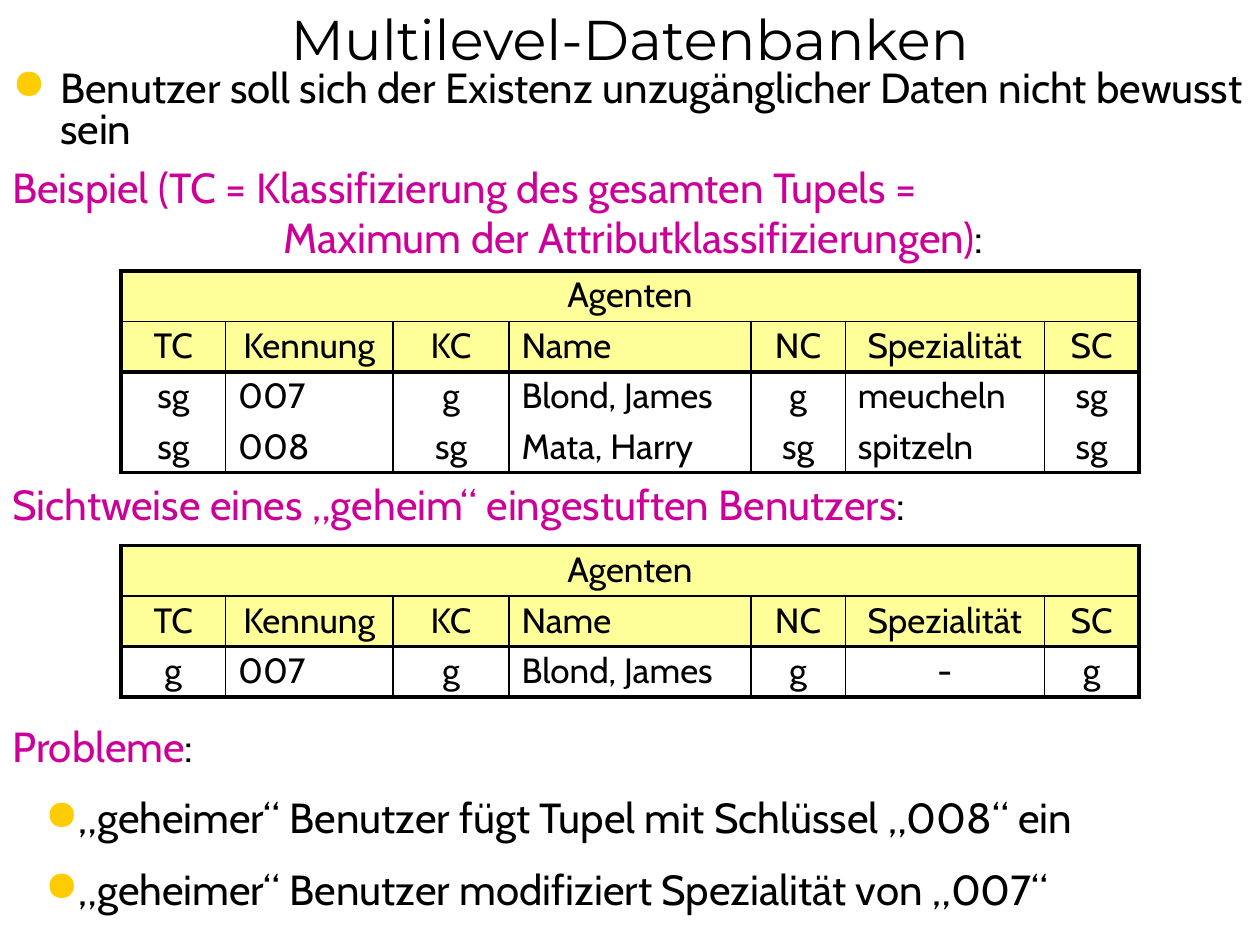
import pptx
import pptx.dml.color
import pptx.enum.text
import pptx.oxml
import pptx.oxml.ns
import pptx.util
from pptx.util import Inches

COLORS = {"black": "000000", "heading": "CC0099", "bullet": "FFCC00", "header": "FFFF99"}
BODY_FONT = "Cabin"
ALIGN = pptx.enum.text.PP_ALIGN
COLUMNS = ["TC", "Kennung", "KC", "Name", "NC", "Spezialität", "SC"]
WIDTHS = [0.83, 1.33, 0.92, 1.92, 0.75, 1.58, 0.75]
TEXT_COLUMNS = {"Kennung", "Name", "Spezialität"}
ROW_HEIGHT = 0.4
THICK, THIN = 2.25, 1


def rgb(name):
    return pptx.dml.color.RGBColor.from_string(COLORS[name])


def style_paragraph(paragraph, size, font=BODY_FONT, align=ALIGN.LEFT):
    paragraph.alignment = align
    paragraph.font.size = pptx.util.Pt(size)
    paragraph.font.name = font
    paragraph.font.color.rgb = rgb("black")


def add_text_frame(slide, top, height):
    box = slide.shapes.add_textbox(Inches(0), Inches(top), Inches(10), Inches(height))
    box.text_frame.word_wrap = True
    return box.text_frame


def append_xml(parent, content):
    tag, rest = content.split(" ", 1)
    namespace = pptx.oxml.ns.nsdecls("a")
    parent.append(pptx.oxml.parse_xml(f"<{tag} {namespace} {rest}"))


def add_title(slide, text):
    frame = add_text_frame(slide, 0, 0.6)
    frame.vertical_anchor = pptx.enum.text.MSO_ANCHOR.MIDDLE
    frame.paragraphs[0].text = text
    style_paragraph(frame.paragraphs[0], 32, "Montserrat", ALIGN.CENTER)


def write_bullet(paragraph, text, left, hanging):
    paragraph.text = text
    style_paragraph(paragraph, 24)
    properties = paragraph._p.get_or_add_pPr()
    properties.set("marL", str(Inches(left)))
    properties.set("indent", str(-Inches(hanging)))
    append_xml(properties, f'a:buClr ><a:srgbClr val="{COLORS["bullet"]}"/></a:buClr>')
    append_xml(properties, 'a:buChar char="●"/>')


def add_heading(slide, top, height, text):
    frame = add_text_frame(slide, top, height)
    paragraph = frame.paragraphs[0]
    paragraph.text = text
    paragraph.runs[0].font.color.rgb = rgb("heading")
    for run in paragraph.runs:
        run.font.color.rgb = rgb("heading")
    paragraph.add_run().text = ":"
    style_paragraph(paragraph, 24)
    return frame


def set_borders(cell, left, right, top, bottom):
    properties = cell._tc.get_or_add_tcPr()
    for side, width in zip("LRTB", (left, right, top, bottom)):
        if width:
            line = f'<a:solidFill><a:srgbClr val="{COLORS["black"]}"/></a:solidFill>'
        else:
            line = "<a:noFill/>"
        append_xml(properties, f'a:ln{side} w="{pptx.util.Pt(width)}">{line}</a:ln{side}>')


def fill_cell(cell, text, align, is_header):
    cell.text = text
    paragraph = cell.text_frame.paragraphs[0]
    style_paragraph(paragraph, 20, align=align)
    paragraph.line_spacing = 0.9
    if is_header:
        cell.fill.solid()
        cell.fill.fore_color.rgb = rgb("header")
    else:
        cell.fill.background()


def cell_alignment(column, text, is_header):
    if column == "Name" or (column in TEXT_COLUMNS and not is_header and text != "-"):
        return ALIGN.LEFT
    return ALIGN.CENTER


def add_agents_table(slide, top, records):
    rows = [["Agenten"] + [""] * (len(COLUMNS) - 1), COLUMNS] + records
    last_row, last_column = len(rows) - 1, len(COLUMNS) - 1
    table = slide.shapes.add_table(
        len(rows), len(COLUMNS), Inches(0.96), Inches(top),
        Inches(sum(WIDTHS)), Inches(ROW_HEIGHT * len(rows))).table
    table.first_row = table.horz_banding = False
    for column, width in zip(table.columns, WIDTHS):
        column.width = Inches(width)
    row_lines = [THICK, THIN, THICK] + [0] * (len(records) - 1) + [THICK]
    for r, values in enumerate(rows):
        table.rows[r].height = Inches(ROW_HEIGHT)
        for c, text in enumerate(values):
            cell = table.cell(r, c)
            inner = THIN if r else 0
            set_borders(cell, inner if c else THICK, inner if c < last_column else THICK,
                        row_lines[r], row_lines[r + 1])
            align = ALIGN.CENTER if r == 0 else cell_alignment(COLUMNS[c], text, r == 1)
            fill_cell(cell, text, align, r < 2)
    title = table.cell(0, 0)
    title.merge(table.cell(0, last_column))
    title._tc.tcPr.find(pptx.oxml.ns.qn("a:lnR")).getparent().replace(
        title._tc.tcPr.find(pptx.oxml.ns.qn("a:lnR")),
        pptx.oxml.parse_xml(
            f'<a:lnR {pptx.oxml.ns.nsdecls("a")} w="{pptx.util.Pt(THICK)}"><a:solidFill>'
            f'<a:srgbClr val="{COLORS["black"]}"/></a:solidFill></a:lnR>'))


def main():
    presentation = pptx.Presentation()
    presentation.slide_width, presentation.slide_height = Inches(10), Inches(7.5)
    slide = presentation.slides.add_slide(presentation.slide_layouts[6])

    add_title(slide, "Multilevel-Datenbanken")
    goal = add_text_frame(slide, 0.52, 0.75).paragraphs[0]
    write_bullet(goal, "Benutzer soll sich der Existenz unzugänglicher Daten nicht bewusst sein",
                 0.38, 0.38)
    goal.line_spacing = 0.8

    example = add_heading(slide, 1.23, 0.9, "Beispiel (TC = Klassifizierung des gesamten Tupels = "
                          "\v\tMaximum der Attributklassifizierungen)")
    append_xml(example.paragraphs[0]._p.get_or_add_pPr(),
               f'a:tabLst ><a:tab pos="{Inches(2.15)}" algn="l"/></a:tabLst>')
    add_agents_table(slide, 2.15, [
        ["sg", "007", "g", "Blond, James", "g", "meucheln", "sg"],
        ["sg", "008", "sg", "Mata, Harry", "sg", "spitzeln", "sg"],
    ])

    add_heading(slide, 3.75, 0.5, "Sichtweise eines „geheim“ eingestuften Benutzers")
    add_agents_table(slide, 4.33, [["g", "007", "g", "Blond, James", "g", "-", "g"]])

    problems = add_heading(slide, 5.67, 1.7, "Probleme")
    for text in ("„geheimer“ Benutzer fügt Tupel mit Schlüssel „008“ ein",
                 "„geheimer“ Benutzer modifiziert Spezialität von „007“"):
        paragraph = problems.add_paragraph()
        paragraph.level = 1
        paragraph.space_before = pptx.util.Pt(12)
        write_bullet(paragraph, text, 0.5, 0.24)

    presentation.save("out.pptx")


if __name__ == "__main__":
    main()
